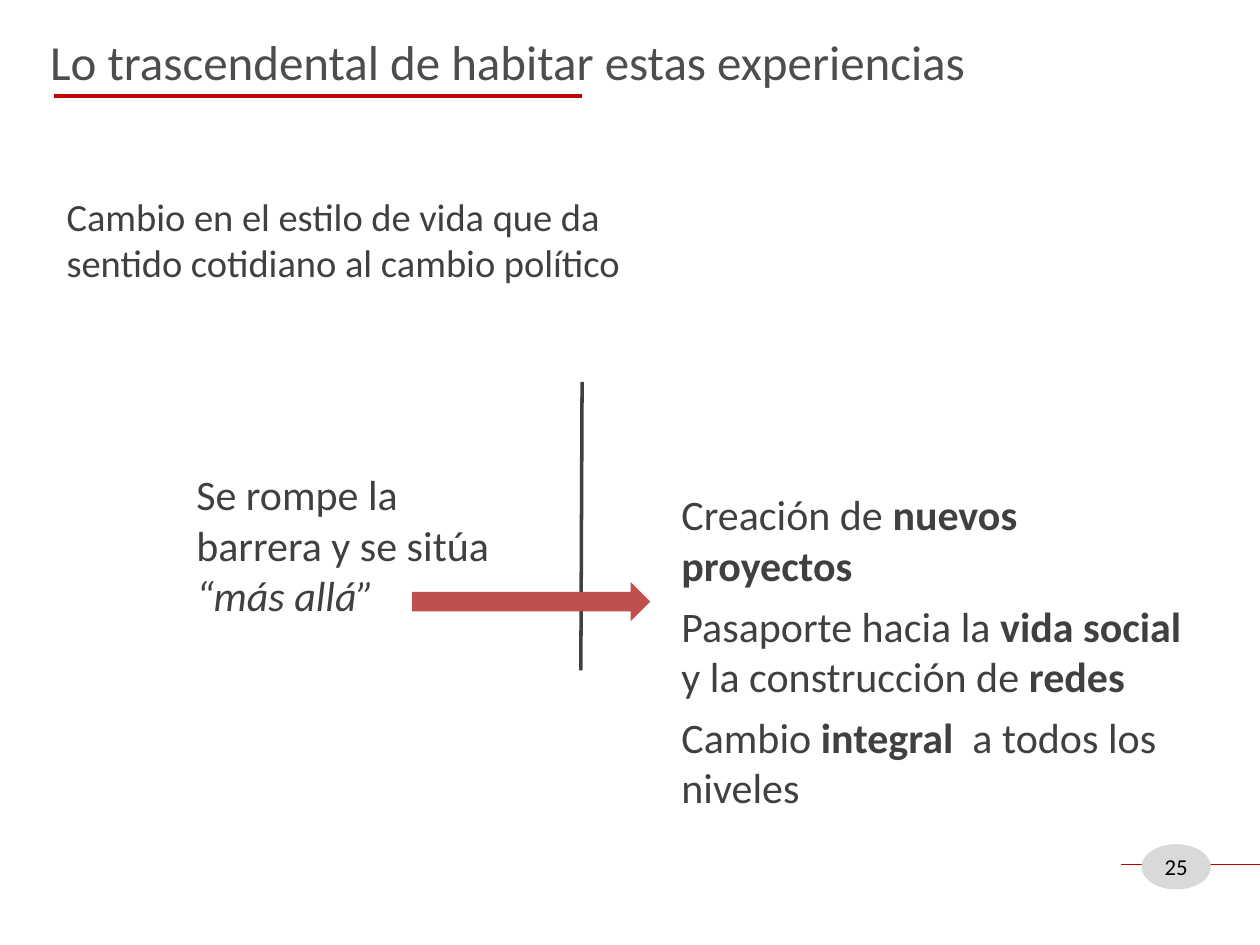
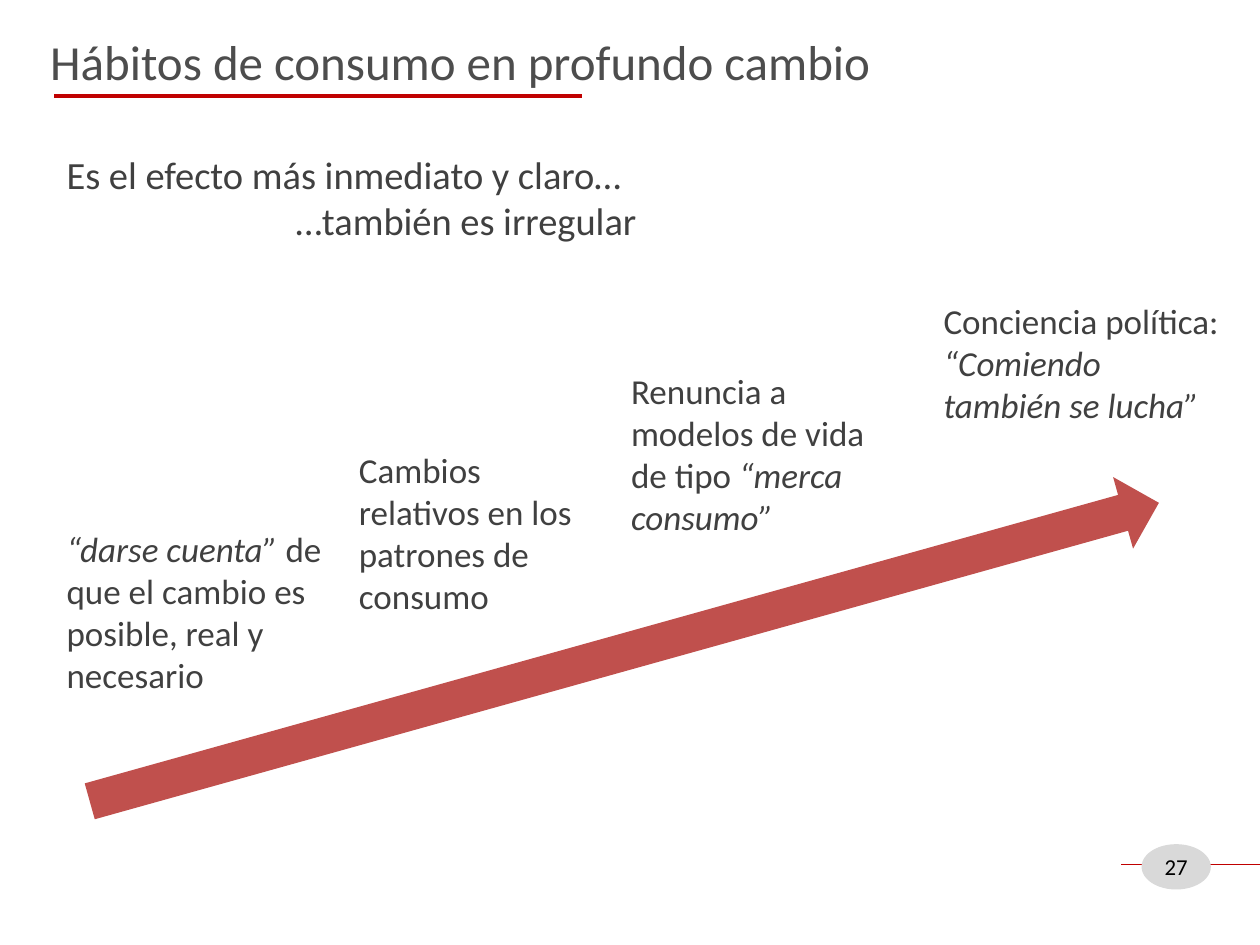
from lxml import etree
from pptx import Presentation
from pptx import util as u
from pptx.dml.color import RGBColor
from pptx.enum import shapes, text
from pptx.oxml.ns import qn

WHITE = RGBColor(0xFF, 0xFF, 0xFF)
BLACK = RGBColor(0, 0, 0)
TITLE_GREY = RGBColor(0x4D, 0x4D, 0x4D)
BODY_GREY = RGBColor(0x40, 0x40, 0x40)
BADGE_GREY = RGBColor(0xD9, 0xD9, 0xD9)
RULE_RED = RGBColor(0xC0, 0, 0)
ARROW_RED = RGBColor(0xC0, 0x50, 0x4D)
FONT = "Calibri"
COLUMNS, ROWS = 100, 75
LEFT_MARGIN = 4.3


def write_text(frame, *paragraphs, size=20, color=BODY_GREY, emphasis="italic",
               aligns=(), spacing=0):
    """Parts between asterisks take the emphasis."""
    frame.word_wrap = True
    for index, content in enumerate(paragraphs):
        paragraph = frame.add_paragraph() if index else frame.paragraphs[0]
        paragraph.space_before = paragraph.space_after = u.Pt(spacing)
        if index < len(aligns):
            paragraph.alignment = aligns[index]
        for part, words in enumerate(content.split("*")):
            if not words:
                continue
            run = paragraph.add_run()
            run.text = words
            run.font.name = FONT
            run.font.size = u.Pt(size)
            run.font.color.rgb = color
            setattr(run.font, emphasis, part % 2 == 1)


class Deck:
    def __init__(self):
        self.show = Presentation()
        self.show.slide_width = u.Inches(10)
        self.show.slide_height = u.Inches(7.5)
        self.column = self.show.slide_width / COLUMNS
        self.row = self.show.slide_height / ROWS
        self.slide = None

    def place(self, left, top, width, height):
        return (round(left * self.column), round(top * self.row),
                round(width * self.column), round(height * self.row))

    def start(self, title):
        self.slide = self.show.slides.add_slide(self.show.slide_layouts[6])
        background = self.slide.background.fill
        background.solid()
        background.fore_color.rgb = WHITE
        self.words((3, 2, 84.8, 5.7), title, size=28, color=TITLE_GREY)
        self.line((LEFT_MARGIN, 7.6), (46.2, 7.6), RULE_RED, 2.5)

    def number(self, page):
        self.line((89, 68.6), (COLUMNS, 68.6), RULE_RED, 0.75)
        badge = self.shape(shapes.MSO_SHAPE.OVAL, (90.6, 67, 5.5, 3.6), BADGE_GREY)
        frame = badge.text_frame
        frame.vertical_anchor = text.MSO_ANCHOR.MIDDLE
        frame.margin_left = frame.margin_right = 0
        frame.margin_top = frame.margin_bottom = 0
        write_text(frame, str(page), size=13, color=BLACK,
                   aligns=[text.PP_ALIGN.CENTER])

    def words(self, area, *paragraphs, **style):
        frame = self.slide.shapes.add_textbox(*self.place(*area)).text_frame
        write_text(frame, *paragraphs, **style)
        frame.auto_size = text.MSO_AUTO_SIZE.SHAPE_TO_FIT_TEXT

    def line(self, start, end, color, width):
        ends = self.place(*start, *end)
        connector = self.slide.shapes.add_connector(shapes.MSO_CONNECTOR.STRAIGHT, *ends)
        connector.line.color.rgb = color
        connector.line.width = u.Pt(width)
        properties = connector._element.find(qn("p:spPr"))
        etree.SubElement(properties, qn("a:effectLst"))

    def shape(self, preset, area, color):
        figure = self.slide.shapes.add_shape(preset, *self.place(*area))
        figure.shadow.inherit = False
        figure.fill.solid()
        figure.fill.fore_color.rgb = color
        figure.line.fill.background()
        return figure

    def arrow(self, area, rotation=0):
        figure = self.shape(shapes.MSO_SHAPE.RIGHT_ARROW, area, ARROW_RED)
        figure.rotation = rotation


def add_experiences(deck):
    deck.start("Lo trascendental de habitar estas experiencias")
    deck.words((LEFT_MARGIN, 14.8, 48.8, 8.4),
               "Cambio en el estilo de vida que da sentido cotidiano al cambio político",
               size=22)
    deck.words((53.1, 38.3, 42.5, 26.9),
               "Creación de *nuevos proyectos*",
               "Pasaporte hacia la *vida social *y la construcción de *redes*",
               "Cambio *integral*  a todos los niveles",
               size=24, emphasis="bold", spacing=3)
    deck.words((14.6, 36.7, 28.3, 13.1),
               "Se rompe la barrera y se sitúa *“más allá”*", size=24)
    deck.line((46.2, 30.3), (46.1, 53.2), BODY_GREY, 2)
    deck.arrow((32.7, 46.2, 18.9, 3.1))
    deck.number(25)


def add_consumption(deck):
    deck.start("Hábitos de consumo en profundo cambio")
    deck.words((LEFT_MARGIN, 11.5, 47.2, 8.4),
               "Es el efecto más inmediato y claro…", "…también es irregular",
               size=22, aligns=[text.PP_ALIGN.LEFT, text.PP_ALIGN.RIGHT])
    deck.arrow((5.5, 48.8, 88.1, 5.9), rotation=344.4)
    stages = [
        (LEFT_MARGIN, 41.4, 22.8, 14.5,
         "*“darse cuenta” *de que el cambio es posible, real y necesario"),
        (27.5, 35.1, 20.6, 14.5, "Cambios relativos en los patrones de consumo"),
        (49.1, 28.8, 23.8, 14.5, "Renuncia a modelos de vida de tipo *“merca consumo”*"),
        (73.9, 23.3, 24.2, 11.1, "Conciencia política: *“Comiendo también se lucha”*"),
    ]
    for *area, stage in stages:
        deck.words(area, stage)
    deck.number(27)


def main():
    deck = Deck()
    add_experiences(deck)
    add_consumption(deck)
    deck.show.save("out.pptx")


if __name__ == "__main__":
    main()
